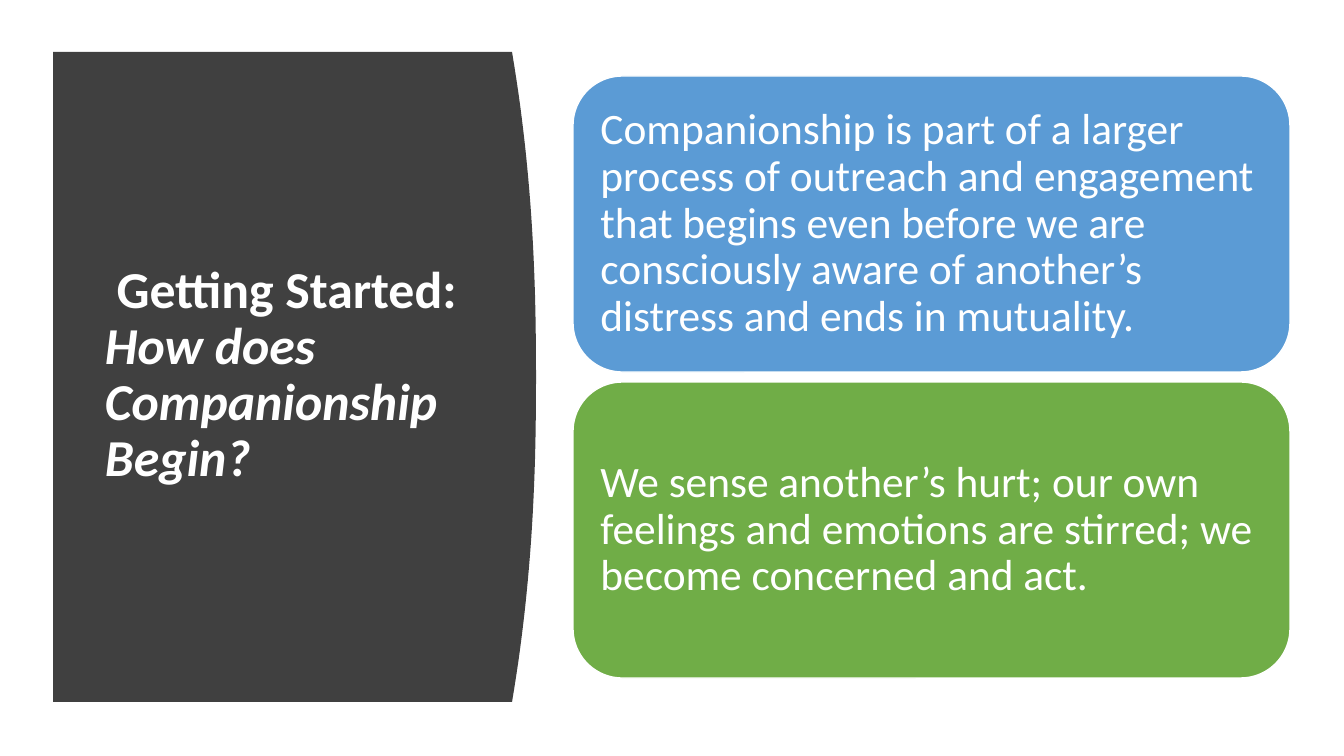
"""Builds the "Getting Started" slide: a curved title panel beside two statement cards."""
from pptx import Presentation
from pptx.dml.color import RGBColor
from pptx.enum.shapes import MSO_SHAPE
from pptx.enum.text import MSO_ANCHOR, PP_ALIGN
from pptx.util import Pt

PX = 914400 / 100.8
CHARCOAL = RGBColor(0x40, 0x40, 0x40)
BLUE = RGBColor(0x5B, 0x9B, 0xD5)
GREEN = RGBColor(0x70, 0xAD, 0x47)
WHITE = RGBColor(0xFF, 0xFF, 0xFF)


def px(*lengths):
    return [round(length * PX) for length in lengths]


def style_paragraph(paragraph, size):
    paragraph.alignment = PP_ALIGN.LEFT
    paragraph.line_spacing = 0.9
    paragraph.font.name = "Calibri"
    paragraph.font.size = Pt(size)
    paragraph.font.color.rgb = WHITE


prs = Presentation()
prs.slide_width, prs.slide_height = px(1344, 756)
slide = prs.slides.add_slide(prs.slide_layouts[6])

LEFT, TOP, EDGE, BOTTOM, BULGE, STEPS = 53, 52, 512, 702, 24, 48
outline = slide.shapes.build_freeform(*px(LEFT, TOP))
curve = []
for step in range(STEPS + 1):
    offset = abs(2 * step / STEPS - 1)
    x = EDGE + BULGE * (1 - offset ** 2.3)
    y = TOP + (BOTTOM - TOP) * step / STEPS
    curve.append(px(x, y))
outline.add_line_segments(curve + [px(LEFT, BOTTOM)], close=True)
panel = outline.convert_to_shape()
panel.shadow.inherit = False
panel.fill.solid()
panel.fill.fore_color.rgb = CHARCOAL
panel.line.fill.background()

title = slide.shapes.add_textbox(*px(95, 112, 377, 528)).text_frame
title.word_wrap = True
title.vertical_anchor = MSO_ANCHOR.MIDDLE
heading = title.paragraphs[0]
style_paragraph(heading, 37)
heading.font.bold = True
heading.add_run().text = " Getting Started: "
question = heading.add_run()
question.text = "How does Companionship Begin?"
question.font.italic = True

statements = [
    (BLUE, "Companionship is part of a larger process of outreach and engagement "
           "that begins even before we are consciously aware of another’s distress "
           "and ends in mutuality."),
    (GREEN, "We sense another’s hurt; our own feelings and emotions are stirred; "
            "we become concerned and act."),
]
for row, (color, statement) in enumerate(statements):
    card = slide.shapes.add_shape(
        MSO_SHAPE.ROUNDED_RECTANGLE, *px(573, 76 + row * 306, 717, 296))
    card.shadow.inherit = False
    card.fill.solid()
    card.fill.fore_color.rgb = color
    card.line.color.rgb = WHITE
    card.line.width = Pt(1)
    frame = card.text_frame
    frame.word_wrap = True
    frame.vertical_anchor = MSO_ANCHOR.MIDDLE
    frame.margin_left, frame.margin_top, frame.margin_right, frame.margin_bottom = px(
        13, 13, 13, 13)
    frame.text = statement
    style_paragraph(frame.paragraphs[0], 31)
    frame.paragraphs[0].space_after = Pt(11)

prs.save("out.pptx")
